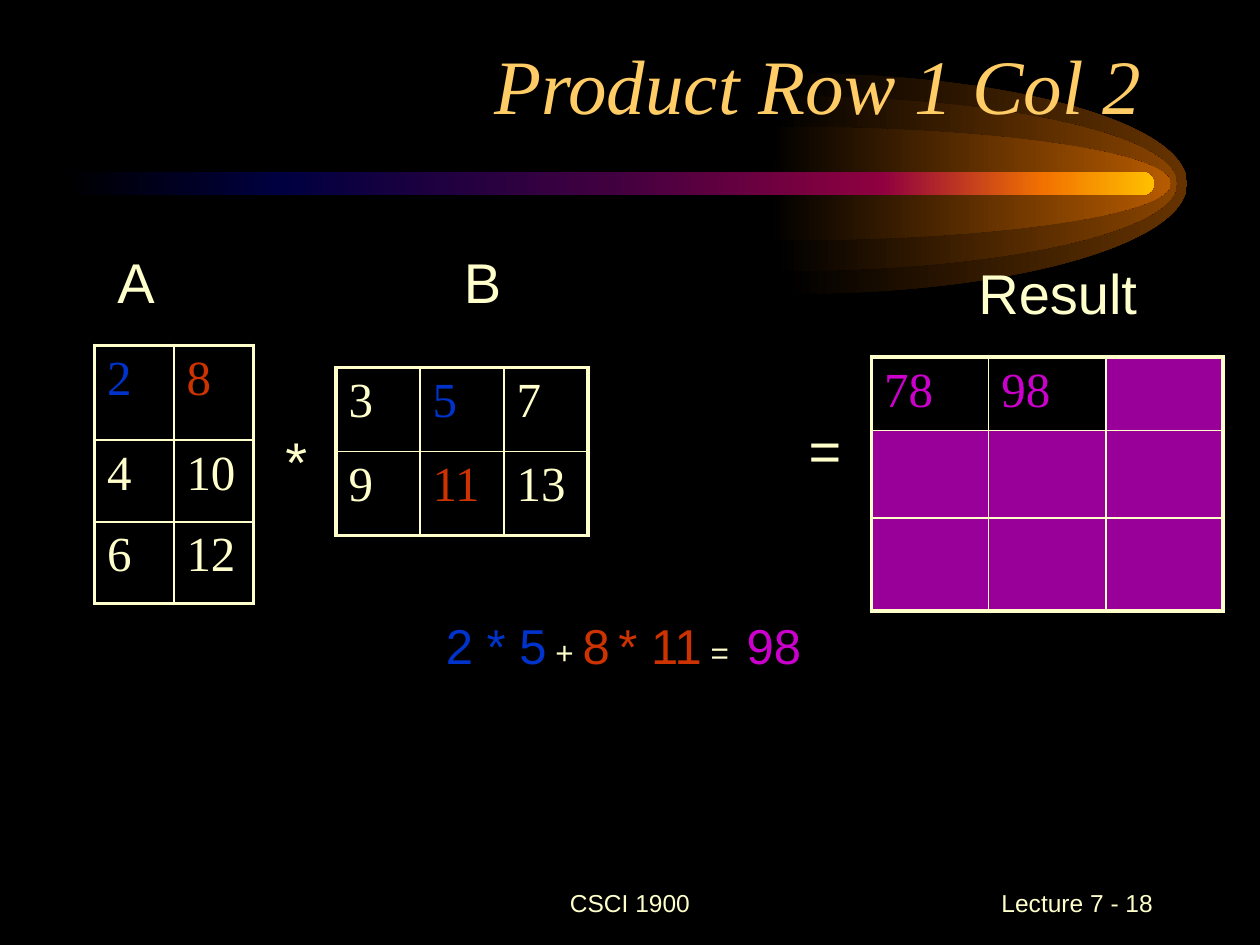
from pptx import Presentation
from pptx.dml.color import RGBColor
from pptx.enum.shapes import MSO_SHAPE
from pptx.enum.text import MSO_ANCHOR, PP_ALIGN
from pptx.oxml.ns import qn
from pptx.oxml.xmlchemy import OxmlElement
from pptx.util import Pt

BLACK = RGBColor(0x00, 0x00, 0x00)
CREAM = RGBColor(0xFF, 0xFF, 0xCC)
GOLD = RGBColor(0xFF, 0xCC, 0x66)
BLUE = RGBColor(0x00, 0x33, 0xCC)
RED = RGBColor(0xCC, 0x33, 0x00)
MAGENTA = RGBColor(0xCC, 0x00, 0xCC)
PURPLE = RGBColor(0x99, 0x00, 0x99)
GLOW_OUTER = RGBColor(0x66, 0x33, 0x00)
GLOW_MIDDLE = RGBColor(0x89, 0x44, 0x00)
GLOW_INNER = RGBColor(0xB7, 0x5B, 0x00)
TAIL_STOPS = [
    (0, BLACK),
    (20, RGBColor(0x00, 0x00, 0x40)),
    (50, RGBColor(0x40, 0x00, 0x40)),
    (75, RGBColor(0x8F, 0x00, 0x40)),
    (90, RGBColor(0xF2, 0x73, 0x00)),
    (100, RGBColor(0xFF, 0xBF, 0x00)),
]


def add_element(parent, tag, **attributes):
    element = OxmlElement(tag)
    for name, value in attributes.items():
        element.set(name, str(value))
    parent.append(element)
    return element


def set_space_before(paragraph, percent):
    """Set the space before as a share of the line height."""
    spacing = add_element(paragraph._p.get_or_add_pPr(), "a:spcBef")
    add_element(spacing, "a:spcPct", val=percent * 1000)


def bend_segment(segment, points):
    """Turn a straight outline segment into a Bezier curve."""
    curve = OxmlElement("a:cubicBezTo")
    for x, y in points:
        add_element(curve, "a:pt", x=Pt(x), y=Pt(y))
    segment.getparent().replace(segment, curve)


class MatrixSlide:
    serif = "Times New Roman"
    sans = "Arial"
    outer_border = 2.25
    inner_border = 1

    def __init__(self, presentation):
        self.slide = presentation.slides.add_slide(presentation.slide_layouts[5])
        background = self.slide.background.fill
        background.solid()
        background.fore_color.rgb = BLACK

    def format_run(self, run, size, color, font=sans, italic=False):
        run.font.size = Pt(size)
        run.font.name = font
        run.font.italic = italic
        run.font.color.rgb = color

    def paint_gradient(self, shape, stops):
        shape.shadow.inherit = False
        shape.line.fill.background()
        shape.fill.gradient()
        shape.fill.gradient_angle = 0
        stop_list = shape._element.spPr.find(qn("a:gradFill")).find(qn("a:gsLst"))
        for old_stop in list(stop_list):
            stop_list.remove(old_stop)
        for position, color in stops:
            stop = add_element(stop_list, "a:gs", pos=position * 1000)
            add_element(stop, "a:srgbClr", val=color)

    def add_glow(self, left, top, width, height, color, flat=3.6):
        """Draw the right half of an ellipse, fading to black at its left."""
        middle = height / 2
        corners = [(flat, 0), (width, middle), (flat, height), (0, height)]
        points = [(Pt(left + x), Pt(top + y)) for x, y in corners]
        builder = self.slide.shapes.build_freeform(*points[0])
        builder.add_line_segments(points[1:], close=True)
        glow = builder.convert_to_shape()

        roundness = 0.55
        handle_x = flat + (width - flat) * roundness
        handle_y = middle * roundness
        upper, lower = list(glow._element.spPr.iter(qn("a:lnTo")))[:2]
        bend_segment(upper, [(handle_x, 0), (width, middle - handle_y), corners[1]])
        bend_segment(lower, [(width, middle + handle_y), (handle_x, height), corners[2]])
        self.paint_gradient(glow, [(0, BLACK), (100, color)])

    def add_tail(self, left, top, width, height):
        tail = self.slide.shapes.add_shape(
            MSO_SHAPE.ROUNDED_RECTANGLE, Pt(left), Pt(top), Pt(width), Pt(height)
        )
        tail.adjustments[0] = 0.5
        self.paint_gradient(tail, TAIL_STOPS)

    def add_title(self, text, left, top, width, height):
        title = self.slide.shapes.title
        title._element.getparent().append(title._element)  # in front of the glow
        title.left, title.top = Pt(left), Pt(top)
        title.width, title.height = Pt(width), Pt(height)
        frame = title.text_frame
        frame.text = text
        frame.vertical_anchor = MSO_ANCHOR.BOTTOM
        paragraph = frame.paragraphs[0]
        paragraph.alignment = PP_ALIGN.RIGHT
        self.format_run(paragraph.runs[0], 44, GOLD, self.serif, italic=True)

    def add_text(self, pieces, left, top, width, height, wrap=True,
                 align=PP_ALIGN.LEFT, anchor=MSO_ANCHOR.TOP, space_before=0):
        """Add a text box from (text, size, color) pieces."""
        box = self.slide.shapes.add_textbox(Pt(left), Pt(top), Pt(width), Pt(height))
        frame = box.text_frame
        frame.word_wrap = wrap
        frame.vertical_anchor = anchor
        paragraph = frame.paragraphs[0]
        paragraph.alignment = align
        if space_before:
            set_space_before(paragraph, space_before)
        for text, size, color in pieces:
            run = paragraph.add_run()
            run.text = text
            self.format_run(run, size, color)

    def add_label(self, text, left, top, width, wrap=False):
        self.add_text([(text, 32, CREAM)], left, top, width, 45.4, wrap)

    def add_footer(self, text, left, width, align):
        self.add_text([(text, 14, CREAM)], left, 498, width, 36,
                      align=align, anchor=MSO_ANCHOR.MIDDLE)

    def add_border(self, cell, side, width):
        line = add_element(cell._tc.get_or_add_tcPr(), f"a:ln{side}", w=Pt(width))
        fill = add_element(line, "a:solidFill")
        add_element(fill, "a:srgbClr", val=CREAM)

    def add_matrix(self, values, colors, left, top, column_width, row_heights):
        """Add a table; colors maps a value to its colour, None is an open cell."""
        row_count, column_count = len(values), len(values[0])
        table = self.slide.shapes.add_table(
            row_count, column_count, Pt(left), Pt(top),
            Pt(column_width * column_count), Pt(sum(row_heights))
        ).table
        table.first_row = table.horz_banding = False
        for column in table.columns:
            column.width = Pt(column_width)
        for row, height in zip(table.rows, row_heights):
            row.height = Pt(height)
        for row, row_values in enumerate(values):
            for column, value in enumerate(row_values):
                cell = table.cell(row, column)
                outside = {
                    "L": column == 0, "R": column == column_count - 1,
                    "T": row == 0, "B": row == row_count - 1,
                }
                for side, is_outer in outside.items():
                    self.add_border(
                        cell, side, self.outer_border if is_outer else self.inner_border
                    )
                cell.fill.solid()
                cell.fill.fore_color.rgb = PURPLE if value is None else BLACK
                if value is not None:
                    cell.text = str(value)
                    paragraph = cell.text_frame.paragraphs[0]
                    set_space_before(paragraph, 20)
                    color = colors.get(value, CREAM)
                    self.format_run(paragraph.runs[0], 28, color, self.serif)


def main():
    presentation = Presentation()
    presentation.slide_width, presentation.slide_height = Pt(720), Pt(540)
    page = MatrixSlide(presentation)

    page.add_glow(449.3, 41.9, 229, 126, GLOW_OUTER)
    page.add_glow(443.5, 54.9, 229, 100, GLOW_MIDDLE)
    page.add_glow(440, 72.4, 229, 65, GLOW_INNER)
    page.add_tail(36, 98.4, 623.5, 13)

    page.add_footer("CSCI 1900", 246, 228, PP_ALIGN.CENTER)
    page.add_footer(" Lecture 7 - 18", 516, 150, PP_ALIGN.RIGHT)
    page.add_title("Product Row 1 Col 2", 48, 18, 612, 60)

    page.add_matrix([[2, 8], [4, 10], [6, 12]], {2: BLUE, 8: RED},
                    54, 197.25, 45.4, [54.2, 46.8, 46.6])
    page.add_matrix([[3, 5, 7], [9, 11, 13]], {5: BLUE, 11: RED},
                    192, 210, 48, [48, 48])
    page.add_matrix([[78, 98, None], [None] * 3, [None] * 3],
                    {78: MAGENTA, 98: MAGENTA}, 498, 204, 67, [42, 50, 53.3])

    page.add_label("*", 156, 240, 27.4)
    page.add_label("=", 455, 234, 55.4, wrap=True)
    page.add_label("A", 60, 138, 36)
    page.add_label("B", 258, 138, 36)
    page.add_label("Result", 552, 144, 105)
    page.add_text(
        [(" 2 * 5", 28, BLUE), (" + ", 18, CREAM), ("8", 28, RED), (" ", 18, CREAM),
         ("* 11", 28, RED), (" =  ", 18, CREAM), ("98", 28, MAGENTA)],
        240, 348, 282, 41, space_before=50,
    )
    presentation.save("out.pptx")


if __name__ == "__main__":
    main()
